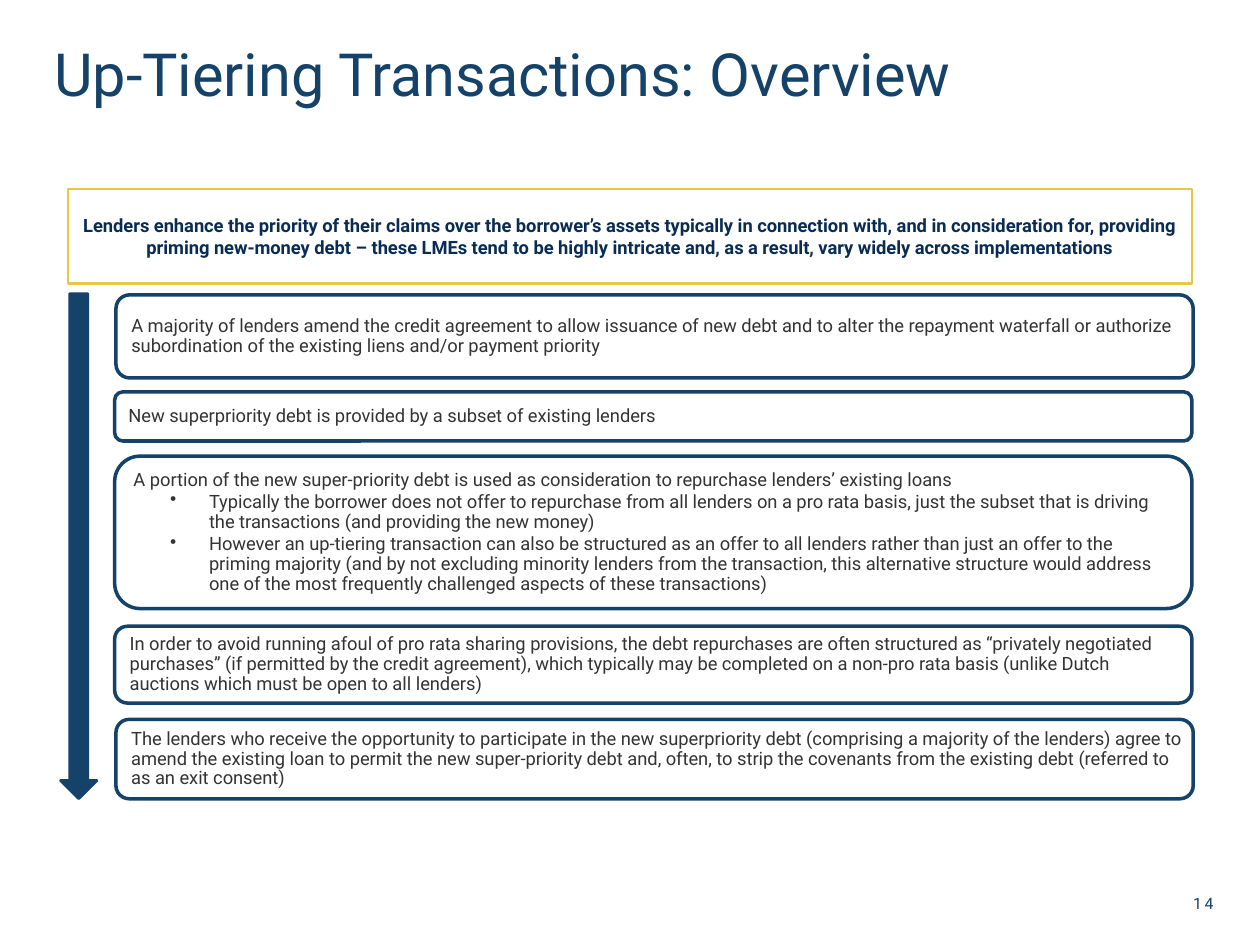
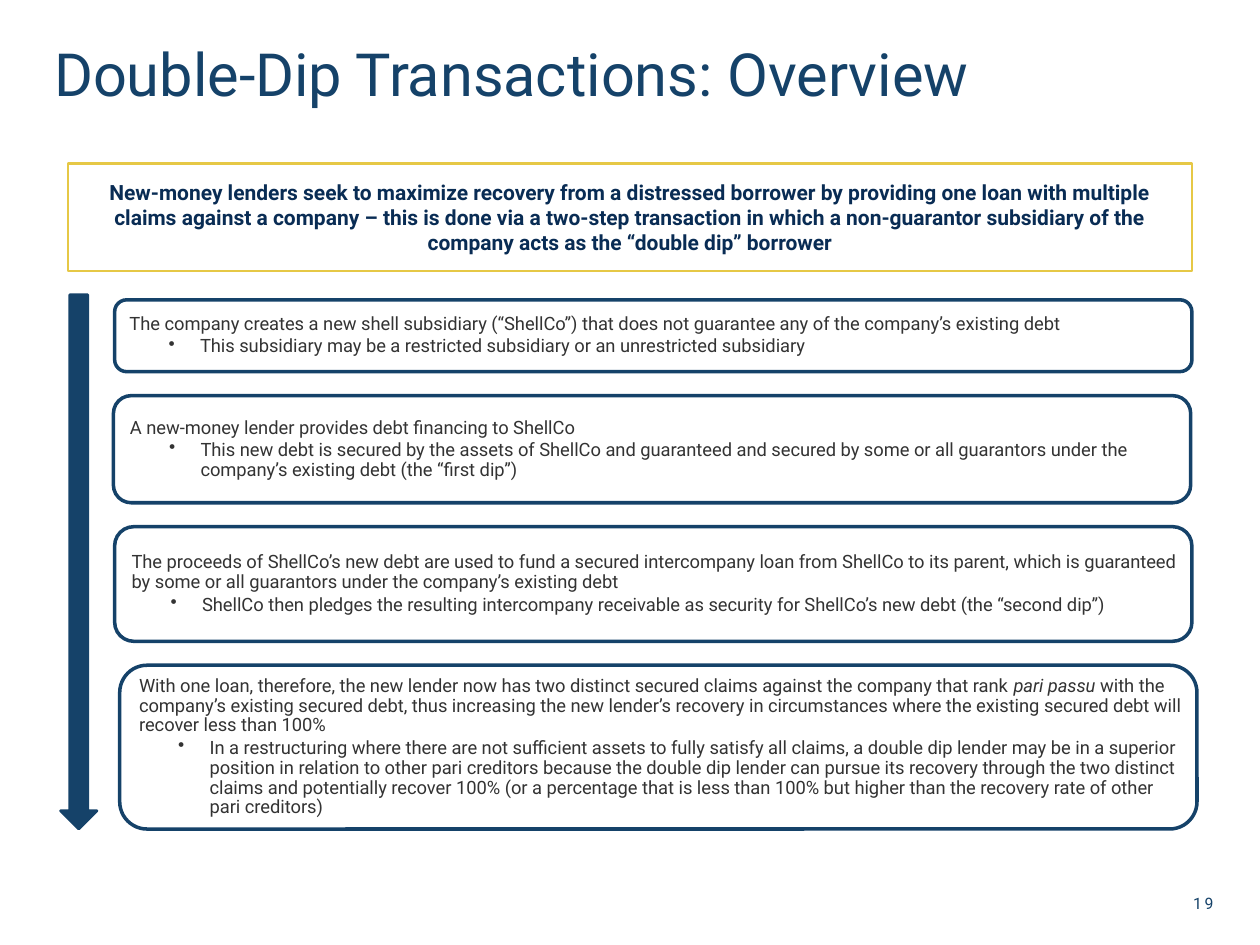
from pptx import Presentation
from pptx.dml.color import RGBColor
from pptx.enum.shapes import MSO_SHAPE
from pptx.enum.text import MSO_ANCHOR, PP_ALIGN
from pptx.oxml.ns import qn
from pptx.util import Inches, Pt
from lxml.etree import SubElement

COLORS = {"navy": "154269", "ink": "092C54", "gold": "E6C846", "body": "333333", "white": "FFFFFF"}
CELL = 0.1
TITLE = {"size": Pt(34), "color": "navy"}
NUMBER = {"size": Pt(9), "color": "navy"}
BANNER = {"bold": True, "color": "ink"}
STEP = {"size": Pt(10.5), "color": "body"}
STEP_WIDTH = 85.5

SLIDES = [
    {
        "title": "Up-Tiering Transactions: Overview",
        "number": "14",
        "banner": (15, 7.5, 10.5, "Lenders enhance the priority of their claims over the borrower’s assets typically in connection with, and in consideration for, providing priming new-money debt – these LMEs tend to be highly intricate and, as a result, vary widely across implementations"),
        "arrow": (23.3, 40.1),
        "indent": (0.6, -0.31),
        "steps": [
            (9.2, 23.4, 6.6, ["A majority of lenders amend the credit agreement to allow issuance of new debt and to alter the repayment waterfall or authorize subordination of the existing liens and/or payment priority"]),
            (9.1, 31.1, 3.9, ["New superpriority debt is provided by a subset of existing lenders"]),
            (9.1, 36.2, 12.1, [
                "A portion of the new super-priority debt is used as consideration to repurchase lenders’ existing loans",
                "Typically the borrower does not offer to repurchase from all lenders on a pro rata basis, just the subset that is driving the transactions (and providing the new money)",
                "However an up-tiering transaction can also be structured as an offer to all lenders rather than just an offer to the priming majority (and by not excluding minority lenders from the transaction, this alternative structure would address one of the most frequently challenged aspects of these transactions)"]),
            (9.1, 49.7, 6.1, ["In order to avoid running afoul of pro rata sharing provisions, the debt repurchases are often structured as “privately negotiated purchases” (if permitted by the credit agreement), which typically may be completed on a non-pro rata basis (unlike Dutch auctions which must be open to all lenders)"]),
            (9.2, 57.1, 6.3, ["The lenders who receive the opportunity to participate in the new superpriority debt (comprising a majority of the lenders) agree to amend the existing loan to permit the new super-priority debt and, often, to strip the covenants from the existing debt (referred to as an exit consent)"]),
        ],
    },
    {
        "title": "Double-Dip Transactions: Overview",
        "number": "19",
        "banner": (13, 8.5, 12, "New-money lenders seek to maximize recovery from a distressed borrower by providing one loan with multiple claims against a company – this is done via a two-step transaction in which a non-guarantor subsidiary of the company acts as the “double dip” borrower"),
        "arrow": (23.4, 42.4),
        "indent": (0.56, -0.25),
        "steps": [
            (9.1, 23.8, 5.7, [
                "The company creates a new shell subsidiary (“ShellCo”) that does not guarantee any of the company’s existing debt",
                "This subsidiary may be a restricted subsidiary or an unrestricted subsidiary"]),
            (9, 31.4, 8.5, [
                "A new-money lender provides debt financing to ShellCo",
                "This new debt is secured by the assets of ShellCo and guaranteed and secured by some or all guarantors under the company’s existing debt (the “first dip”)"]),
            (9.1, 41.8, 9.1, [
                "The proceeds of ShellCo’s new debt are used to fund a secured intercompany loan from ShellCo to its parent, which is guaranteed by some or all guarantors under the company’s existing debt",
                "ShellCo then pledges the resulting intercompany receivable as security for ShellCo’s new debt (the “second dip”)"]),
            (9.5, 52.8, 13, [
                "With one loan, therefore, the new lender now has two distinct secured claims against the company that rank *pari passu *with the company’s existing secured debt, thus increasing the new lender’s recovery in circumstances where the existing secured debt will recover less than 100%",
                "In a restructuring where there are not sufficient assets to fully satisfy all claims, a double dip lender may be in a superior position in relation to other pari creditors because the double dip lender can pursue its recovery through the two distinct claims and potentially recover 100% (or a percentage that is less than 100% but higher than the recovery rate of other pari creditors)"]),
        ],
    },
]


def rgb(name):
    return RGBColor.from_string(COLORS[name])


def grid(*cells):
    return [Inches(round(c * CELL, 2)) for c in cells]


def set_attrs(target, values):
    for name, value in values.items():
        setattr(target, name, value)


def set_frame(tf, anchor, margins):
    set_attrs(tf, {"word_wrap": True, "vertical_anchor": anchor})
    for side, inches in zip(("left", "top", "right", "bottom"), margins):
        setattr(tf, f"margin_{side}", Inches(inches))


def write(p, text, style, **layout):
    for i, part in enumerate(text.split("*")):
        r = p.add_run()
        r.text = part
        font = {k: v for k, v in style.items() if k != "color"}
        set_attrs(r.font, {"name": "Roboto", **font})
        r.font.color.rgb = rgb(style["color"])
        if i % 2:
            r.font.italic = True
    set_attrs(p, layout)


def add_bullet(p, indent):
    pPr = p._p.get_or_add_pPr()
    left, hanging = indent
    pPr.set("marL", str(Inches(left)))
    pPr.set("indent", str(Inches(hanging)))
    SubElement(pPr, qn("a:buChar"), char="•")


def add_box(s, kind, cells, fill, line, width):
    sp = s.shapes.add_shape(kind, *grid(*cells))
    sp.shadow.inherit = False
    sp.fill.solid()
    sp.fill.fore_color.rgb = rgb(fill)
    sp.line.color.rgb = rgb(line)
    sp.line.width = Pt(width)
    return sp


def add_title(s, text):
    sp = s.shapes.title
    set_attrs(sp, dict(zip(("left", "top", "width", "height"), grid(4.3, 3.8, 91.3, 6.1))))
    set_frame(sp.text_frame, MSO_ANCHOR.TOP, (0, 0, 0, 0))
    write(sp.text_frame.paragraphs[0], text, TITLE, alignment=PP_ALIGN.LEFT, line_spacing=0.85)


def add_number(s, text):
    tf = s.shapes.add_textbox(*grid(92.5, 70.9, 3.8, 1.5)).text_frame
    set_frame(tf, MSO_ANCHOR.TOP, (0, 0, 0, 0))
    p = tf.paragraphs[0]
    write(p, text, NUMBER, alignment=PP_ALIGN.RIGHT)
    p.runs[0]._r.get_or_add_rPr().set("spc", "150")


def add_banner(s, top, height, size, text):
    sp = add_box(s, MSO_SHAPE.RECTANGLE, (5.4, top, 89.2, height), "white", "gold", 1.5)
    set_frame(sp.text_frame, MSO_ANCHOR.MIDDLE, (0.1, 0.05, 0.1, 0.05))
    write(sp.text_frame.paragraphs[0], text, {**BANNER, "size": Pt(size)}, alignment=PP_ALIGN.CENTER)


def add_step(s, left, top, height, lines, indent):
    sp = add_box(s, MSO_SHAPE.ROUNDED_RECTANGLE, (left, top, STEP_WIDTH, height), "white", "navy", 2)
    tf = sp.text_frame
    set_frame(tf, MSO_ANCHOR.MIDDLE, (0.09, 0.05, 0.05, 0.05))
    for i, text in enumerate(lines):
        p = tf.add_paragraph() if i else tf.paragraphs[0]
        if i:
            add_bullet(p, indent)
        write(p, text, STEP, alignment=PP_ALIGN.LEFT, line_spacing=0.9, space_after=Pt(1.5))


def main():
    prs = Presentation()
    prs.slide_width, prs.slide_height = grid(100, 75)
    for content in SLIDES:
        s = prs.slides.add_slide(prs.slide_layouts[5])
        add_title(s, content["title"])
        add_number(s, content["number"])
        add_banner(s, *content["banner"])
        top, height = content["arrow"]
        add_box(s, MSO_SHAPE.DOWN_ARROW, (4.8, top, 2.9, height), "navy", "navy", 1.5)
        for step in content["steps"]:
            add_step(s, *step, content["indent"])
    prs.save("out.pptx")


if __name__ == "__main__":
    main()
